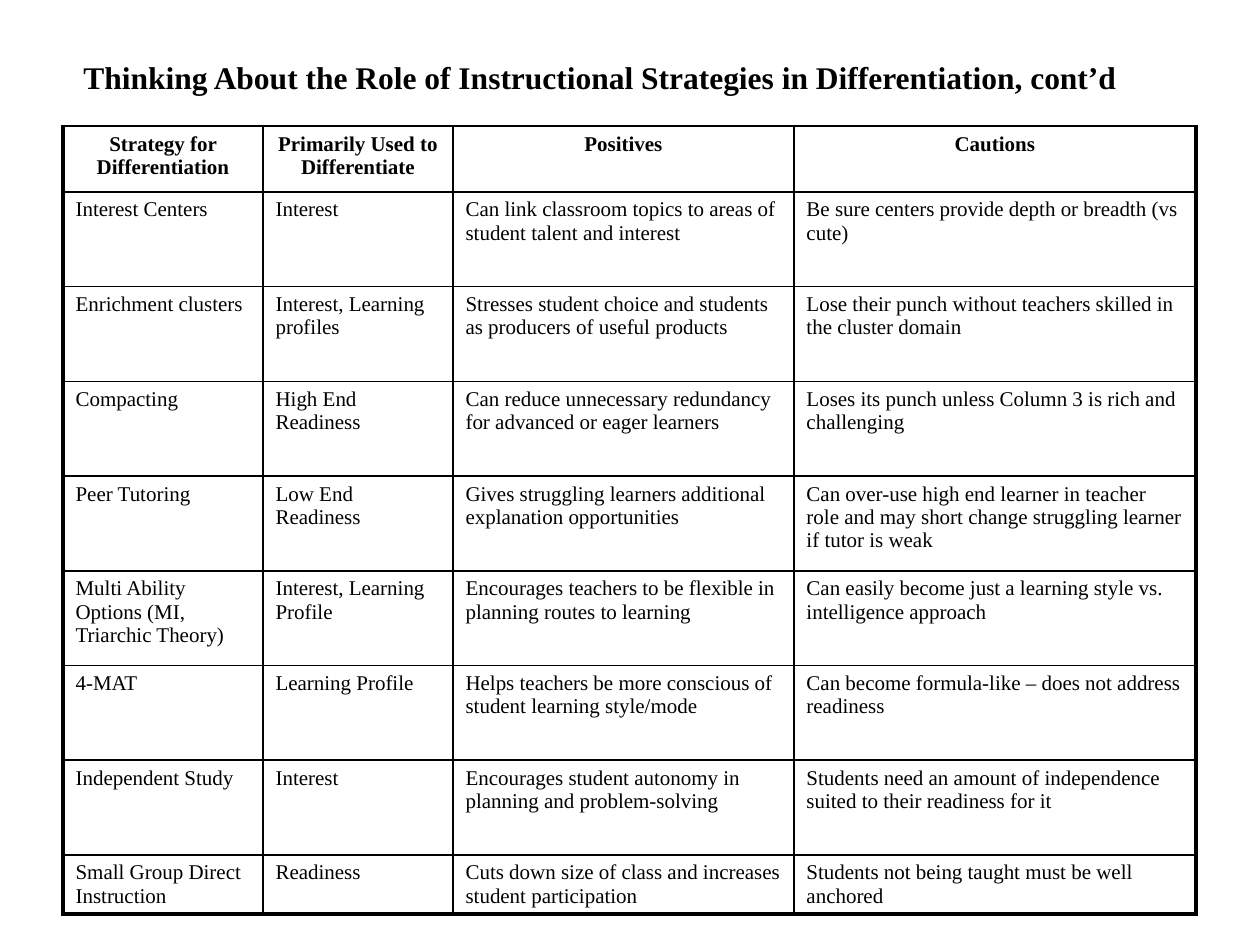
import pptx
import pptx.dml.color
import pptx.enum.text
import pptx.oxml.ns
import pptx.util
from lxml import etree

PX = 914400 // 126
FONT = "Times New Roman"
BLACK = "000000"
CENTER = pptx.enum.text.PP_ALIGN.CENTER
LEFT = pptx.enum.text.PP_ALIGN.LEFT

TITLE = "Thinking About the Role of Instructional Strategies in Differentiation, cont’d"
COLUMNS = [200, 190, 341, 402]
HEADER_H, BODY_H, LAST_H = 66, 663, 58
ROWS = [
    ("Strategy for Differentiation", "Primarily Used to Differentiate", "Positives", "Cautions"),
    ("Interest Centers", "Interest",
     "Can link classroom topics to areas of student talent and interest",
     "Be sure centers provide depth or breadth (vs cute)"),
    ("Enrichment clusters", "Interest, Learning profiles",
     "Stresses student choice and students as producers of useful products",
     "Lose their punch without teachers skilled in the cluster domain"),
    ("Compacting", "High End Readiness",
     "Can reduce unnecessary redundancy for advanced or eager learners",
     "Loses its punch unless Column 3 is rich and challenging"),
    ("Peer Tutoring", "Low End Readiness",
     "Gives struggling learners additional explanation opportunities",
     "Can over-use high end learner in teacher role and may short change "
     "struggling learner if tutor is weak"),
    ("Multi Ability Options (MI, Triarchic Theory)", "Interest, Learning Profile",
     "Encourages teachers to be flexible in planning routes to learning",
     "Can easily become just a learning style vs. intelligence approach"),
    ("4-MAT", "Learning Profile",
     "Helps teachers be more conscious of student learning style/mode",
     "Can become formula-like – does not address readiness"),
    ("Independent Study", "Interest",
     "Encourages student autonomy in planning and problem-solving",
     "Students need an amount of independence suited to their readiness for it"),
    ("Small Group Direct Instruction", "Readiness",
     "Cuts down size of class and increases student participation",
     "Students not being taught must be well anchored"),
]


def color(hex_value):
    return pptx.dml.color.RGBColor.from_string(hex_value)


def add_text(p, text, size=12, bold=False, align=LEFT):
    p.alignment = align
    r = p.add_run()
    r.text = text
    r.font.name = FONT
    r.font.size = pptx.util.Pt(size)
    r.font.bold = bold
    r.font.color.rgb = color(BLACK)


def set_borders(cell, **widths):
    """Draw cell edges; they must come before the fill in the cell properties."""
    tc_pr = cell._tc.get_or_add_tcPr()
    for i, side in enumerate("LRTB"):
        ln = etree.Element(pptx.oxml.ns.qn("a:ln" + side),
                           w=str(pptx.util.Pt(widths.get(side, 1))))
        fill = etree.SubElement(ln, pptx.oxml.ns.qn("a:solidFill"))
        etree.SubElement(fill, pptx.oxml.ns.qn("a:srgbClr"), val=BLACK)
        tc_pr.insert(i, ln)


def place_title(s, x, y, w, h):
    sp = s.shapes.title
    sp.left, sp.top, sp.width, sp.height = (v * PX for v in (x, y, w, h))
    tf = sp.text_frame
    tf.word_wrap = True
    tf.auto_size = pptx.enum.text.MSO_AUTO_SIZE.NONE
    tf.vertical_anchor = pptx.enum.text.MSO_ANCHOR.MIDDLE
    p = tf.paragraphs[0]
    add_text(p, TITLE, size=18, bold=True, align=CENTER)
    # The large closing space sets the line height
    add_text(p, " ", size=40, align=CENTER)


def place_strategy_table(s, x, y):
    height = HEADER_H + BODY_H + LAST_H
    table = s.shapes.add_table(len(ROWS), len(COLUMNS), x * PX, y * PX,
                               sum(COLUMNS) * PX, height * PX).table
    table.first_row = table.horz_banding = False

    # Column widths and row heights
    for column, width in zip(table.columns, COLUMNS):
        column.width = width * PX
    middle = len(ROWS) - 2
    heights = [HEADER_H * PX] + [BODY_H * PX // middle] * middle + [LAST_H * PX]
    for row, row_height in zip(table.rows, heights):
        row.height = row_height

    # Cells, with a heavier edge at left, right and bottom
    for i, texts in enumerate(ROWS):
        header = i == 0
        for j, text in enumerate(texts):
            cell = table.cell(i, j)
            cell.fill.background()
            add_text(cell.text_frame.paragraphs[0], text, bold=header,
                     align=CENTER if header else LEFT)
            set_borders(cell, L=2.25 if j == 0 else 1,
                        R=2.25 if j == len(COLUMNS) - 1 else 1,
                        B=2.25 if i == len(ROWS) - 1 else 1)


def main():
    prs = pptx.Presentation()
    prs.slide_width = pptx.util.Inches(10)
    prs.slide_height = pptx.util.Inches(7.5)
    s = prs.slides.add_slide(prs.slide_layouts.get_by_name("Title Only"))
    place_title(s, 21, 28, 1176, 67)
    place_strategy_table(s, 63, 126)
    prs.save("out.pptx")


if __name__ == "__main__":
    main()
